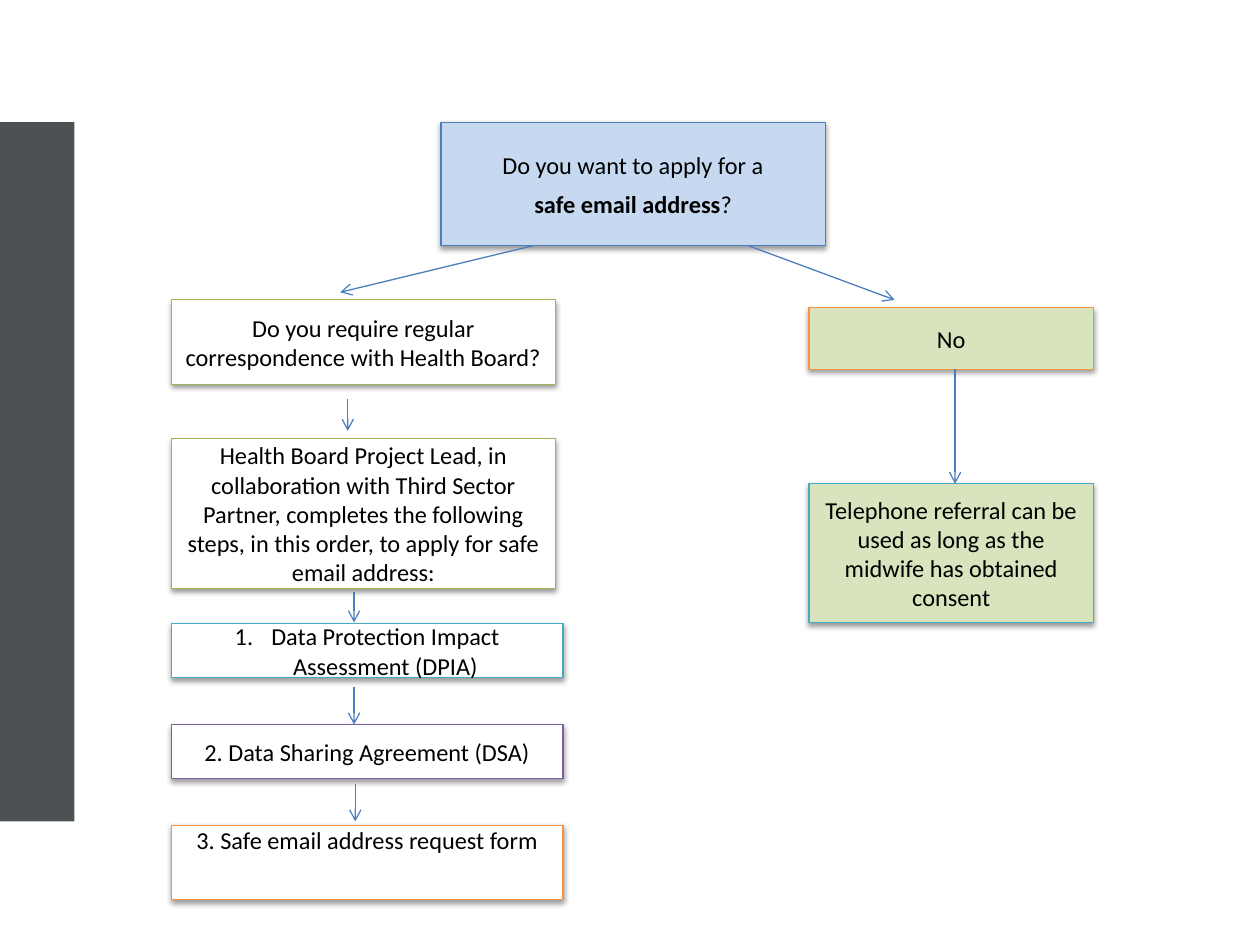
from lxml import etree
from pptx import Presentation
from pptx import util as u
from pptx.dml.color import RGBColor
from pptx.enum import shapes, text
from pptx.oxml import parse_xml
from pptx.oxml.ns import nsdecls, qn

FONT = "Calibri"
BLUE, GREEN, ORANGE, TEAL, PURPLE = "4B7EBC", "98B955", "F69240", "46AAC5", "7D60A0"
WHITE, PALE_BLUE, PALE_GREEN, SLATE = "FFFFFF", "C6D9F1", "D7E4BD", "4C5254"
LEFT_X, RIGHT_X = 1.36, 6.42
QUESTION_WIDTH, STEP_WIDTH, RIGHT_WIDTH = 3.05, 3.11, 2.26
STEP_TOP, STEP_PITCH = 4.95, 0.8

# Each arrow: start x, start y, end x, end y
ARROWS = [
    (4.23, 1.95, 2.7, 2.32),
    (5.94, 1.95, 7.1, 2.38),
    (7.58, 2.93, 7.58, 3.84),
    (2.76, 3.17, 2.76, 3.42),
    (2.81, 4.7, 2.81, 4.94),
    (2.81, 5.45, 2.81, 5.75),
    (2.82, 6.22, 2.82, 6.52),
]


def color(value):
    return RGBColor.from_string(value)


def add_rectangle(slide, left, top, width, height, fill):
    shape = slide.shapes.add_shape(
        shapes.MSO_SHAPE.RECTANGLE, *map(u.Inches, (left, top, width, height)))
    shape.shadow.inherit = False
    shape.fill.solid()
    shape.fill.fore_color.rgb = color(fill)
    shape.line.fill.background()
    return shape


def add_drop_shadow(shape):
    effects = shape._element.spPr.find(qn("a:effectLst"))
    effects.append(parse_xml(
        f'<a:outerShdw {nsdecls("a")} blurRad="{u.Pt(3.1)}" dist="{u.Pt(1.6)}" '
        'dir="5400000" rotWithShape="0"><a:srgbClr val="000000">'
        '<a:alpha val="38000"/></a:srgbClr></a:outerShdw>'))


def add_box(slide, left, top, width, height, fill, outline, *lines):
    """Add a shadowed box with one centred paragraph per line."""
    shape = add_rectangle(slide, left, top, width, height, fill)
    shape.line.color.rgb = color(outline)
    shape.line.width = u.Pt(0.75)
    add_drop_shadow(shape)
    frame = shape.text_frame
    frame.word_wrap = True
    frame.vertical_anchor = text.MSO_ANCHOR.MIDDLE
    frame.text = "\n".join(lines)
    for paragraph in frame.paragraphs:
        paragraph.alignment = text.PP_ALIGN.CENTER
        paragraph.space_after = u.Pt(5.5)
        for run in paragraph.runs:
            format_run(run)
    return shape


def format_run(run, bold=False):
    run.font.name = FONT
    run.font.size = u.Pt(13.9)
    run.font.bold = bold
    run.font.color.rgb = color("000000")


def number_paragraph(paragraph):
    properties = paragraph._p.get_or_add_pPr()
    properties.set("marL", str(u.Inches(0.29)))
    properties.set("indent", str(-u.Inches(0.29)))
    etree.SubElement(properties, qn("a:buFont"), typeface="+mj-lt")
    etree.SubElement(properties, qn("a:buAutoNum"), type="arabicPeriod")


def add_arrow(slide, *ends):
    connector = slide.shapes.add_connector(
        shapes.MSO_CONNECTOR.STRAIGHT, *map(u.Inches, ends))
    connector.line.color.rgb = color(BLUE)
    connector.line.width = u.Pt(0.75)
    etree.SubElement(connector.line._get_or_add_ln(), qn("a:tailEnd"), type="arrow")
    etree.SubElement(connector._element.spPr, qn("a:effectLst"))


def add_opening_question(slide):
    box = add_box(slide, 3.5, 0.97, QUESTION_WIDTH, 0.98, PALE_BLUE, BLUE,
                  "Do you want to apply for a", "safe email address")
    paragraph = box.text_frame.paragraphs[1]
    paragraph.runs[0].font.bold = True
    question_mark = paragraph.add_run()
    question_mark.text = "?"
    format_run(question_mark)


def add_yes_branch(slide):
    add_box(slide, LEFT_X, 2.38, QUESTION_WIDTH, 0.67, WHITE, GREEN,
            "Do you require regular correspondence with Health Board?")
    add_box(slide, LEFT_X, 3.48, QUESTION_WIDTH, 1.19, WHITE, GREEN,
            "Health Board Project Lead, in collaboration with Third Sector Partner, "
            "completes the following steps, in this order, to apply for safe "
            "email address:")
    steps = [
        ("Data Protection Impact Assessment (DPIA)", 0.43, TEAL),
        ("2. Data Sharing Agreement (DSA)", 0.43, PURPLE),
        ("3. Safe email address request form", 0.59, ORANGE),
    ]
    boxes = [
        add_box(slide, LEFT_X, STEP_TOP + index * STEP_PITCH, STEP_WIDTH, height,
                WHITE, outline, label)
        for index, (label, height, outline) in enumerate(steps)
    ]
    number_paragraph(boxes[0].text_frame.paragraphs[0])
    request_frame = boxes[-1].text_frame
    request_frame.vertical_anchor = text.MSO_ANCHOR.TOP
    request_frame.margin_top = 0


def add_no_branch(slide):
    add_box(slide, RIGHT_X, 2.44, RIGHT_WIDTH, 0.49, PALE_GREEN, ORANGE, "No")
    add_box(slide, RIGHT_X, 3.84, RIGHT_WIDTH, 1.1, PALE_GREEN, TEAL,
            "Telephone referral can be used as long as the midwife has "
            "obtained consent")


def main():
    presentation = Presentation()
    presentation.slide_width = u.Inches(10)
    presentation.slide_height = u.Inches(7.5)
    slide = presentation.slides.add_slide(presentation.slide_layouts[6])
    add_rectangle(slide, 0, 0.97, 0.59, 5.55, SLATE)
    add_opening_question(slide)
    add_yes_branch(slide)
    add_no_branch(slide)
    for arrow in ARROWS:
        add_arrow(slide, *arrow)
    presentation.save("out.pptx")


if __name__ == "__main__":
    main()
